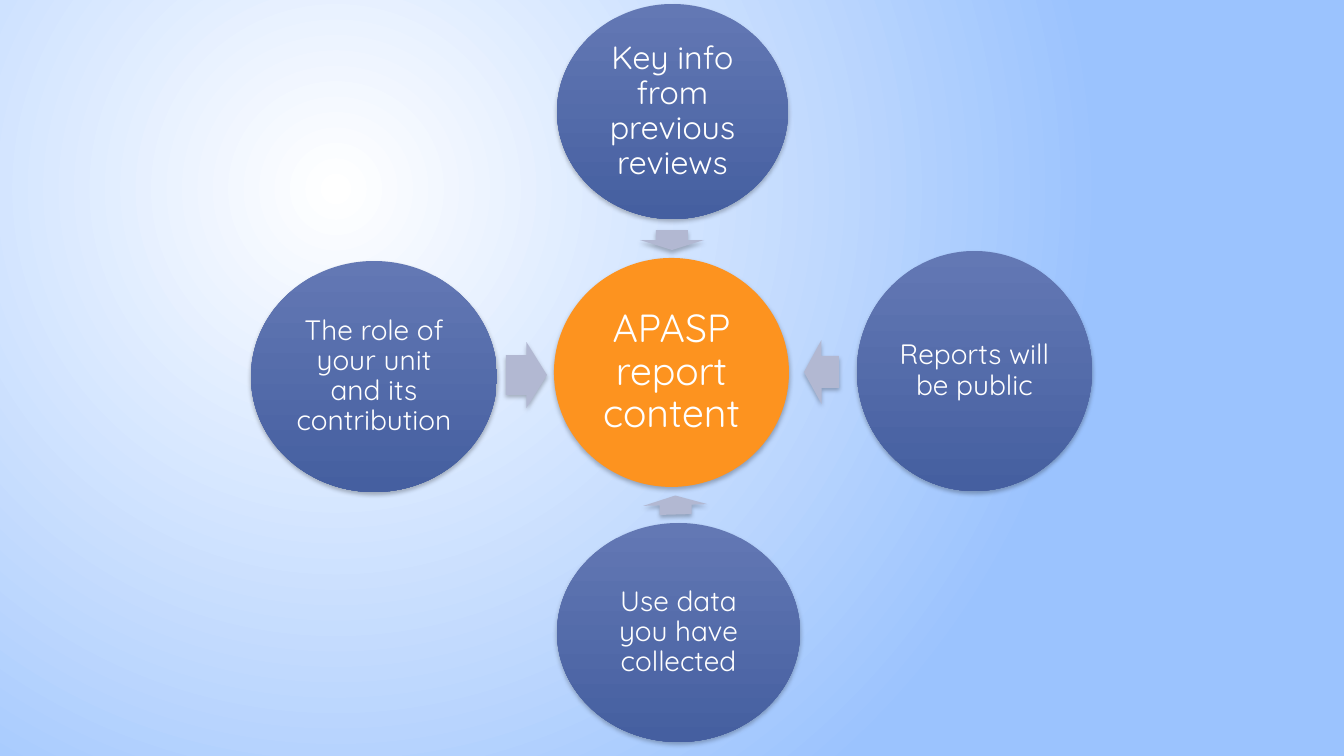
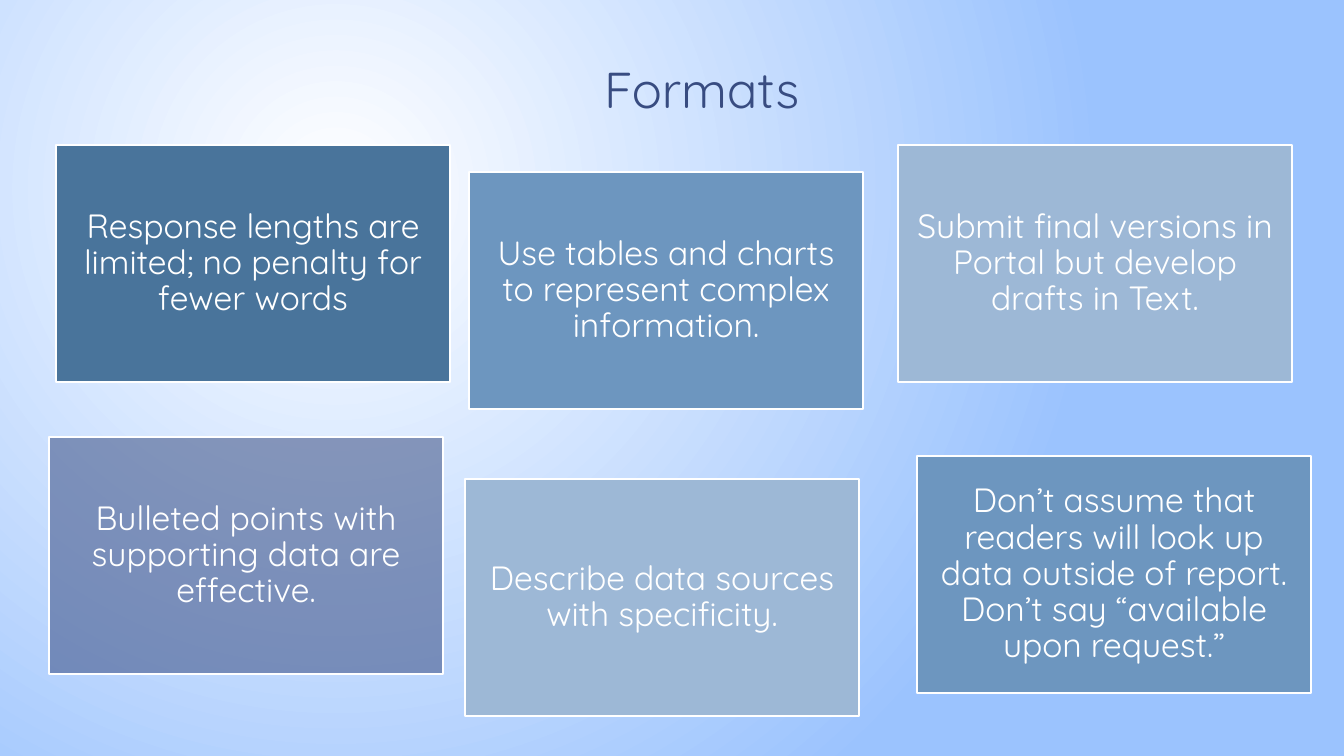
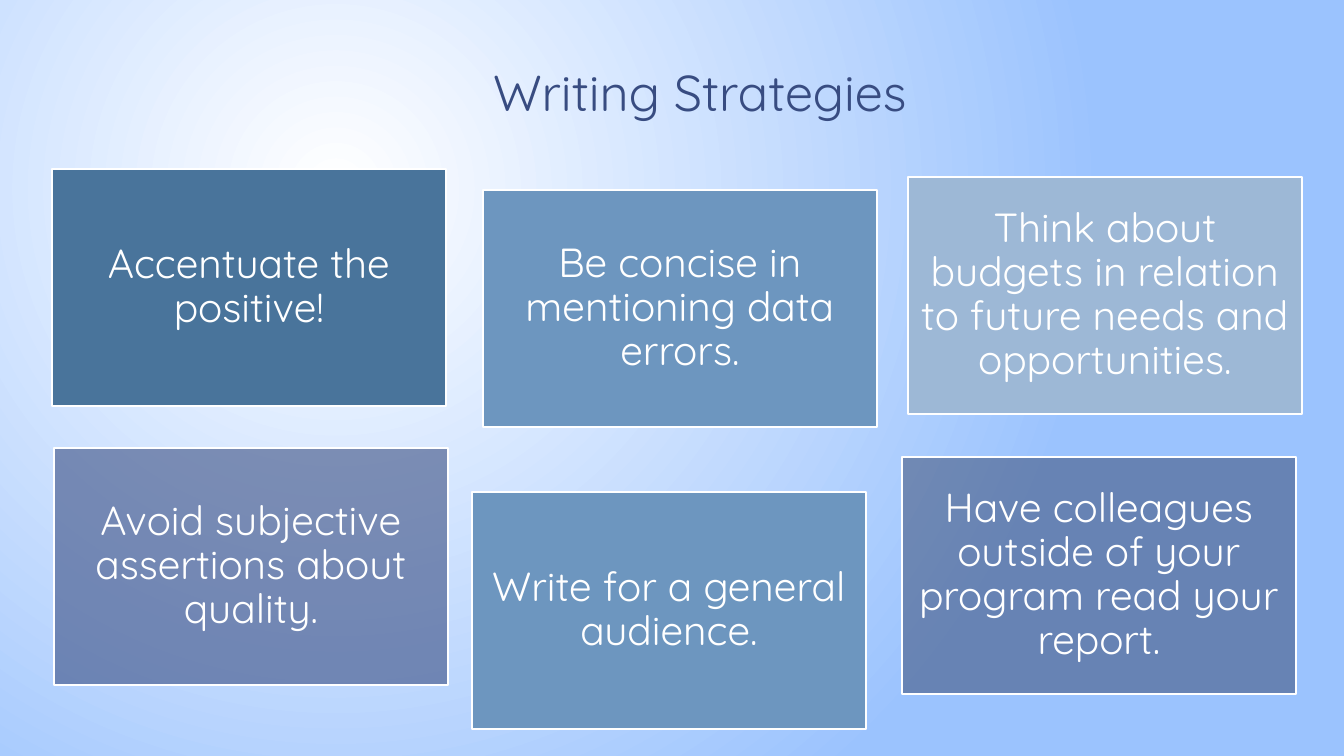
from dataclasses import dataclass

from lxml import etree
from pptx import Presentation
from pptx.dml.color import RGBColor
from pptx.enum.shapes import MSO_SHAPE
from pptx.enum.text import MSO_ANCHOR, MSO_AUTO_SIZE, PP_ALIGN
from pptx.oxml.ns import qn
from pptx.util import Emu, Pt

ELLIPSE = MSO_SHAPE.OVAL
RECTANGLE = MSO_SHAPE.RECTANGLE
LEFT_ARROW = MSO_SHAPE.LEFT_ARROW
RIGHT_ARROW = MSO_SHAPE.RIGHT_ARROW
TOP = MSO_ANCHOR.TOP
MIDDLE = MSO_ANCHOR.MIDDLE
LEFT = PP_ALIGN.LEFT
CENTER = PP_ALIGN.CENTER
NO_AUTOFIT = MSO_AUTO_SIZE.NONE

EMU_PER_PX = 914400 / 100.8
SLIDE_WIDTH, SLIDE_HEIGHT = 1344, 756
CARD_WIDTH, CARD_HEIGHT = 394, 237
TITLE_HEIGHT = 132
TITLE_ONLY_LAYOUT, BLANK_LAYOUT = 5, 6

FONT = "Quicksand"
WHITE = "FFFFFF"
SKY = "9BC3FE"
NAVY = "384C81"
MIDNIGHT = "253356"
ORANGE = "FD931F"
LAVENDER = "B2B8D2"
STEEL = "49749B"
BLUE = "6D96BF"
PALE_BLUE = "9DB8D6"
CIRCLE_GRADIENT = ("6378B4", "455FA0")


@dataclass(frozen=True)
class Circle:
    text: str
    left: int
    top: int
    width: int
    height: int
    size: int
    inset: int = 3
    colors: tuple[str, ...] = CIRCLE_GRADIENT


@dataclass(frozen=True)
class Arrow:
    kind: MSO_SHAPE
    left: int
    top: int
    width: int
    height: int
    rotation: float = 0
    adjustments: tuple[float, ...] = ()


@dataclass(frozen=True)
class Card:
    text: str
    left: int
    top: int
    color: str
    opacity: int = 100


@dataclass(frozen=True)
class CardSlide:
    title: str
    title_left: int
    title_top: int
    title_width: int
    size: int
    inset: int
    cards: tuple[Card, ...]


CIRCLES = (
    Circle("APASP report content", 554, 258, 235, 229, 28, 4, (ORANGE,)),
    Circle("Key info from previous reviews", 557, 4, 231, 215, 23),
    Circle("Reports will be public", 857, 251, 235, 240, 20),
    Circle("Use data you have collected", 557, 523, 243, 219, 20),
    Circle("The role of your unit and its contribution", 251, 261, 246, 231, 20),
)

ARROWS = (
    Arrow(LEFT_ARROW, 662, 208, 20, 64, 270),
    Arrow(LEFT_ARROW, 804, 340, 35, 64, 359.8),
    Arrow(LEFT_ARROW, 666, 473, 19, 64, 88.5),
    Arrow(RIGHT_ARROW, 506, 342, 41, 66, 0, (0.6, 0.5)),
)

CARD_SLIDES = (
    CardSlide("Formats", 594, 53, 350, 24, 10, (
        Card("Response lengths are limited; no penalty for fewer words", 56, 145, STEEL),
        Card("Use tables and charts to represent complex information.", 469, 172, BLUE),
        Card("Submit final versions in Portal but develop drafts in Text.", 898, 145, PALE_BLUE),
        Card("Bulleted points with supporting data are effective.", 49, 437, NAVY, 54),
        Card("Describe data sources with specificity.", 465, 479, PALE_BLUE),
        Card("Don’t assume that readers will look up data outside of report. "
             "Don’t say “available upon request.”", 917, 456, BLUE),
    )),
    CardSlide("Writing Strategies", 483, 56, 478, 29, 12, (
        Card("Accentuate the positive!", 52, 169, STEEL),
        Card("Be concise in mentioning data errors.", 483, 190, BLUE),
        Card("Think about budgets in relation to future needs and opportunities.",
             908, 177, PALE_BLUE),
        Card("Avoid subjective assertions about quality.", 54, 448, NAVY, 59),
        Card("Have colleagues outside of your program read your report.",
             902, 457, MIDNIGHT, 44),
        Card("Write for a general audience.", 472, 492, BLUE),
    )),
)


def px(length: int) -> Emu:
    return Emu(round(length * EMU_PER_PX))


def rgb(color: str) -> RGBColor:
    return RGBColor.from_string(color)


def set_fill(fill, colors: tuple[str, ...]) -> None:
    if len(colors) == 1:
        fill.solid()
        fill.fore_color.rgb = rgb(colors[0])
        return
    fill.gradient()
    fill.gradient_angle = 270
    for stop, color in zip(fill.gradient_stops, colors):
        stop.color.rgb = rgb(color)


def set_background(master) -> None:
    set_fill(master.background.fill, (WHITE, SKY))
    gradient = master.element.find(".//" + qn("a:gradFill"))
    gradient.remove(gradient.find(qn("a:lin")))
    radial = etree.SubElement(gradient, qn("a:path"), {"path": "circle"})
    edges = {"l": "50000", "t": "50000", "r": "100000", "b": "100000"}
    etree.SubElement(radial, qn("a:fillToRect"), edges)


def set_opacity(shape, percent: int) -> None:
    color = shape.element.spPr.find(qn("a:solidFill") + "/" + qn("a:srgbClr"))
    etree.SubElement(color, qn("a:alpha"), {"val": str(percent * 1000)})


def add_shadow(shape) -> None:
    effects = shape.element.spPr.find(qn("a:effectLst"))
    shadow = etree.SubElement(effects, qn("a:outerShdw"), {
        "blurRad": str(Pt(3)), "dist": str(Pt(2)), "dir": "5400000", "rotWithShape": "0"})
    color = etree.SubElement(shadow, qn("a:srgbClr"), {"val": "000000"})
    etree.SubElement(color, qn("a:alpha"), {"val": "25000"})


def add_plain_shape(slide, kind: MSO_SHAPE, left: int, top: int, width: int,
                    height: int, colors: tuple[str, ...]):
    shape = slide.shapes.add_shape(kind, px(left), px(top), px(width), px(height))
    shape.shadow.inherit = False
    set_fill(shape.fill, colors)
    shape.line.fill.background()
    return shape


def write_text(shape, text: str, size: int, color: str = WHITE,
               alignment: PP_ALIGN = CENTER, line_spacing: float = 0.9) -> None:
    paragraph = shape.text_frame.paragraphs[0]
    paragraph.alignment = alignment
    paragraph.line_spacing = line_spacing
    run = paragraph.add_run()
    run.text = text
    run.font.name = FONT
    run.font.size = Pt(size)
    run.font.color.rgb = rgb(color)


def write_label(shape, text: str, size: int, inset: int) -> None:
    frame = shape.text_frame
    frame.word_wrap = True
    frame.vertical_anchor = MIDDLE
    frame.margin_left = frame.margin_right = px(inset)
    frame.margin_top = frame.margin_bottom = px(inset)
    write_text(shape, text, size)


def add_circle(slide, circle: Circle) -> None:
    shape = add_plain_shape(slide, ELLIPSE, circle.left, circle.top,
                            circle.width, circle.height, circle.colors)
    add_shadow(shape)
    write_label(shape, circle.text, circle.size, circle.inset)


def add_arrow(slide, arrow: Arrow) -> None:
    shape = add_plain_shape(slide, arrow.kind, arrow.left, arrow.top,
                            arrow.width, arrow.height, (LAVENDER,))
    shape.rotation = arrow.rotation
    for index, value in enumerate(arrow.adjustments):
        shape.adjustments[index] = value
    add_shadow(shape)


def add_card(slide, card: Card, size: int, inset: int) -> None:
    shape = add_plain_shape(slide, RECTANGLE, card.left, card.top,
                            CARD_WIDTH, CARD_HEIGHT, (card.color,))
    if card.opacity < 100:
        set_opacity(shape, card.opacity)
    set_fill(shape.line.fill, (WHITE,))
    shape.line.width = Pt(1.25)
    write_label(shape, card.text, size, inset)


def place_title(slide, content: CardSlide) -> None:
    title = slide.shapes.title
    title.left, title.top = px(content.title_left), px(content.title_top)
    title.width, title.height = px(content.title_width), px(TITLE_HEIGHT)
    title.text_frame.vertical_anchor = TOP
    title.text_frame.word_wrap = True
    title.text_frame.auto_size = NO_AUTOFIT
    write_text(title, content.title, 36, NAVY, LEFT, 1.0)


def add_diagram_slide(presentation) -> None:
    slide = presentation.slides.add_slide(presentation.slide_layouts[BLANK_LAYOUT])
    for circle in CIRCLES:
        add_circle(slide, circle)
    for arrow in ARROWS:
        add_arrow(slide, arrow)


def add_card_slide(presentation, content: CardSlide) -> None:
    slide = presentation.slides.add_slide(presentation.slide_layouts[TITLE_ONLY_LAYOUT])
    place_title(slide, content)
    for card in content.cards:
        add_card(slide, card, content.size, content.inset)


def main() -> None:
    presentation = Presentation()
    presentation.slide_width = px(SLIDE_WIDTH)
    presentation.slide_height = px(SLIDE_HEIGHT)
    set_background(presentation.slide_master)
    add_diagram_slide(presentation)
    for content in CARD_SLIDES:
        add_card_slide(presentation, content)
    presentation.save("out.pptx")


if __name__ == "__main__":
    main()
